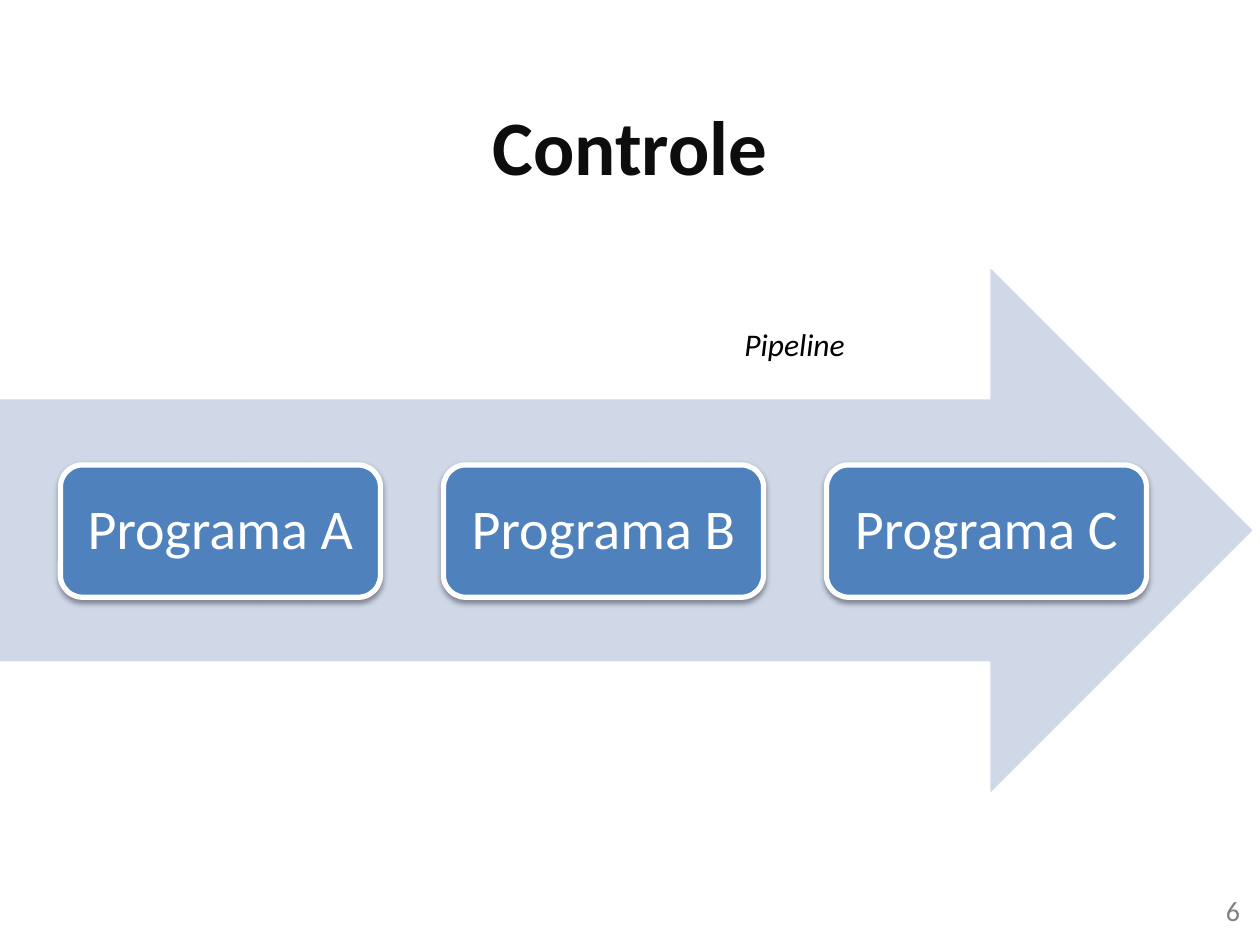
from dataclasses import dataclass

from lxml import etree
from pptx import Presentation
from pptx.dml.color import RGBColor
from pptx.enum.shapes import MSO_SHAPE
from pptx.enum.text import MSO_ANCHOR, PP_ALIGN
from pptx.oxml.ns import qn
from pptx.util import Inches, Pt

ARROW = MSO_SHAPE.RIGHT_ARROW
ROUNDED = MSO_SHAPE.ROUNDED_RECTANGLE
TOP, MIDDLE = MSO_ANCHOR.TOP, MSO_ANCHOR.MIDDLE
LEFT, CENTER, RIGHT = PP_ALIGN.LEFT, PP_ALIGN.CENTER, PP_ALIGN.RIGHT


@dataclass(frozen=True)
class Theme:
    font: str = "Calibri"
    title: str = "0D0D0D"
    label: str = "000000"
    number: str = "808080"
    arrow: str = "D0D8E8"
    program: str = "4F81BD"
    light: str = "FFFFFF"
    shadow: str = "000000"
    title_size: int = 44
    program_size: int = 32
    label_size: int = 18
    number_size: int = 16


@dataclass(frozen=True)
class Box:
    left: float
    top: float
    width: float
    height: float

    def lengths(self) -> list:
        return [Inches(v) for v in (self.left, self.top, self.width, self.height)]


THEME = Theme()
PROGRAMS = ("Programa A", "Programa B", "Programa C")
FIRST_PROGRAM = Box(0.48, 3.69, 2.54, 1.05)
PROGRAM_PITCH = 3.04


def write(shape, text: str, *, size: int, color: str, bold: bool = False,
          italic: bool = False, align=LEFT, anchor=TOP, wrap: bool = True,
          line_spacing: float = 1.0) -> None:
    frame = shape.text_frame
    frame.word_wrap = wrap
    frame.vertical_anchor = anchor
    paragraph = frame.paragraphs[0]
    paragraph.alignment = align
    paragraph.line_spacing = line_spacing
    run = paragraph.add_run()
    run.text = text
    run.font.name = THEME.font
    run.font.size = Pt(size)
    run.font.bold = bold
    run.font.italic = italic
    run.font.color.rgb = RGBColor.from_string(color)


def add_text(slide, box: Box, text: str, **text_format) -> None:
    write(slide.shapes.add_textbox(*box.lengths()), text, **text_format)


def add_filled(slide, kind, box: Box, fill: str):
    shape = slide.shapes.add_shape(kind, *box.lengths())
    shape.fill.solid()
    shape.fill.fore_color.rgb = RGBColor.from_string(fill)
    shape.line.fill.background()
    shape.shadow.inherit = False
    return shape


def add_drop_shadow(shape) -> None:
    effects = shape._element.spPr.find(qn("a:effectLst"))
    shadow = etree.SubElement(
        effects, qn("a:outerShdw"), blurRad=str(Pt(3.1)), dist=str(Pt(1.6)),
        dir=str(90 * 60000), rotWithShape="0")
    color = etree.SubElement(shadow, qn("a:srgbClr"), val=THEME.shadow)
    etree.SubElement(color, qn("a:alpha"), val="38000")


def add_program(slide, box: Box, name: str) -> None:
    program = add_filled(slide, ROUNDED, box, THEME.program)
    program.line.color.rgb = RGBColor.from_string(THEME.light)
    program.line.width = Pt(3)
    add_drop_shadow(program)
    write(program, name, size=THEME.program_size, color=THEME.light,
          align=CENTER, anchor=MIDDLE, line_spacing=0.9)


def main() -> None:
    deck = Presentation()
    deck.slide_width, deck.slide_height = Inches(10), Inches(7.5)
    slide = deck.slides.add_slide(deck.slide_layouts[6])

    # Title and slide number
    add_text(slide, Box(0.5, 0.52, 9, 1.25), "Controle", size=THEME.title_size,
             color=THEME.title, bold=True, align=CENTER, anchor=MIDDLE)
    add_text(slide, Box(7.61, 7.04, 2.33, 0.4), "6", size=THEME.number_size,
             color=THEME.number, align=RIGHT)

    # Pipeline arrow with its evenly spaced programs
    add_filled(slide, ARROW, Box(0, 2.13, 9.94, 4.16), THEME.arrow)
    for index, name in enumerate(PROGRAMS):
        box = Box(FIRST_PROGRAM.left + index * PROGRAM_PITCH, FIRST_PROGRAM.top,
                  FIRST_PROGRAM.width, FIRST_PROGRAM.height)
        add_program(slide, box, name)

    # Arrow label
    add_text(slide, Box(5.81, 2.53, 1.07, 0.4), "Pipeline", size=THEME.label_size,
             color=THEME.label, italic=True, wrap=False)

    deck.save("out.pptx")


if __name__ == "__main__":
    main()
